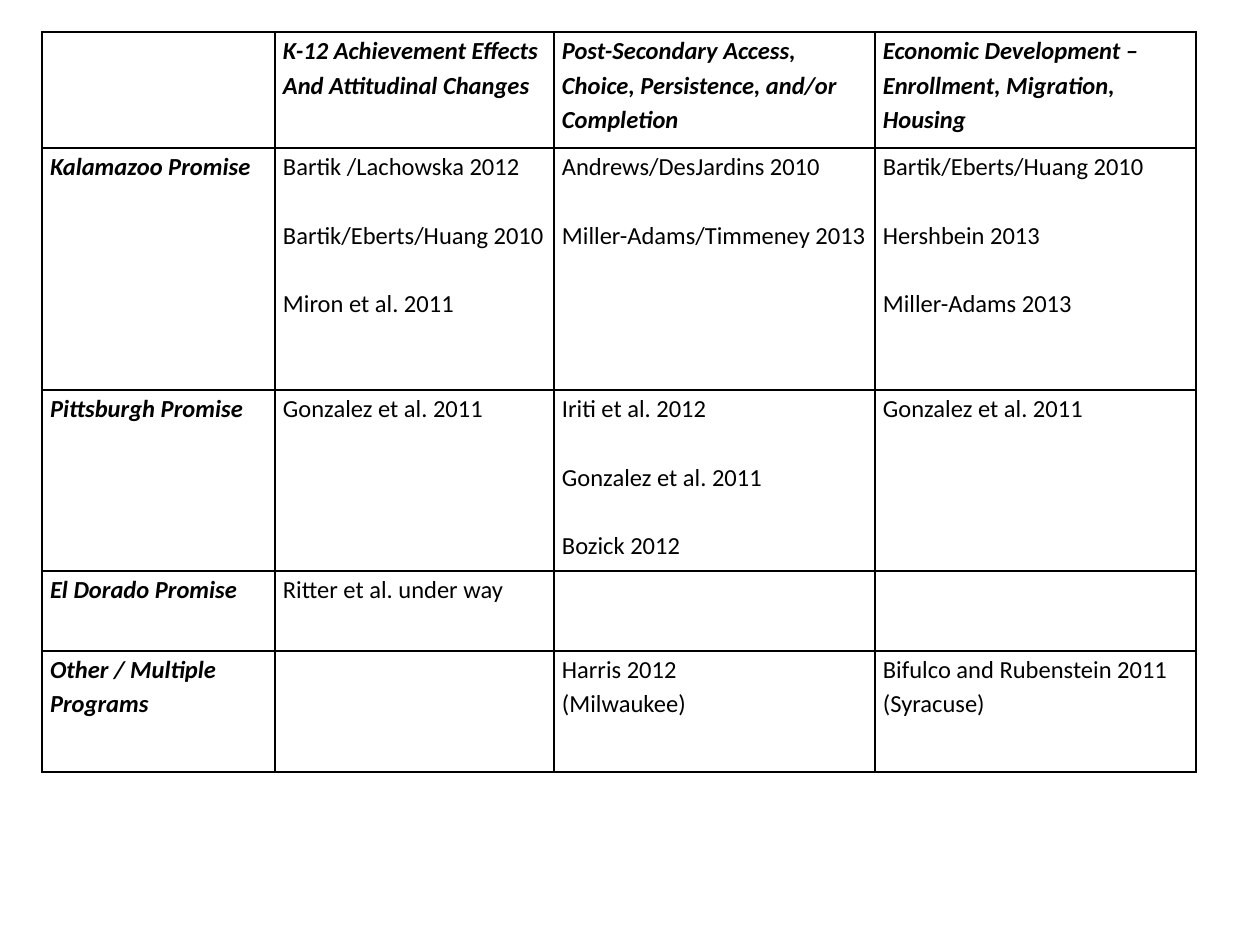
"""Build a slide with a table of Promise programme studies by topic."""
from lxml import etree
from pptx import Presentation
from pptx import util as u
from pptx.dml.color import RGBColor
from pptx.oxml import ns

HEADERS = [
    [],
    ["K-12 Achievement Effects", "And Attitudinal Changes"],
    ["Post-Secondary Access, Choice, Persistence, and/or Completion"],
    ["Economic Development – Enrollment, Migration, Housing"],
]
PROGRAMS = [
    [["Kalamazoo Promise"],
     ["Bartik /Lachowska 2012", "Bartik/Eberts/Huang 2010", "Miron et al. 2011"],
     ["Andrews/DesJardins 2010", "Miller-Adams/Timmeney 2013"],
     ["Bartik/Eberts/Huang 2010", "Hershbein 2013", "Miller-Adams 2013"]],
    [["Pittsburgh Promise"],
     ["Gonzalez et al. 2011"],
     ["Iriti et al. 2012", "Gonzalez et al. 2011", "Bozick 2012"],
     ["Gonzalez et al. 2011"]],
    [["El Dorado Promise"], ["Ritter et al. under way"], [], []],
    [["Other / Multiple Programs"],
     [],
     ["Harris 2012", "(Milwaukee)"],
     ["Bifulco and Rubenstein 2011 (Syracuse)"]],
]
COLUMN_WIDTHS = [233, 279, 321, 321]
ROW_HEIGHTS = [116, 242, 181, 80, 121]
LEFT, TOP, INSET = 42, 32, 8

BLACK = RGBColor(0, 0, 0)
FONT = "Calibri"
LINE_GAP = 19.6


def px(length):
    return u.Emu(round(length * 914400 / 126))


def write(cell, lines, bold=False, gap=0):
    cell.margin_left = cell.margin_right = px(INSET)
    cell.margin_top = cell.margin_bottom = 0
    frame = cell.text_frame
    for index, line in enumerate(lines):
        paragraph = frame.add_paragraph() if index else frame.paragraphs[0]
        paragraph.line_spacing = 1.15
        if index and gap:
            paragraph.space_before = u.Pt(gap)
        run = paragraph.add_run()
        run.text = line
        run.font.name, run.font.size = FONT, u.Pt(14)
        run.font.bold = run.font.italic = bold
        run.font.color.rgb = BLACK


def outline(cell):
    properties = cell._tc.get_or_add_tcPr()
    for side in ("a:lnL", "a:lnR", "a:lnT", "a:lnB"):
        line = etree.SubElement(properties, ns.qn(side), w=str(u.Pt(1)))
        fill = etree.SubElement(line, ns.qn("a:solidFill"))
        etree.SubElement(fill, ns.qn("a:srgbClr"), val=str(BLACK))
    cell.fill.background()


def main():
    presentation = Presentation()
    presentation.slide_width, presentation.slide_height = px(1260), px(945)
    slide = presentation.slides.add_slide(presentation.slide_layouts[6])
    rows = [HEADERS] + PROGRAMS
    table = slide.shapes.add_table(
        len(rows), len(COLUMN_WIDTHS), px(LEFT), px(TOP),
        px(sum(COLUMN_WIDTHS)), px(sum(ROW_HEIGHTS))).table
    table.first_row = table.horz_banding = False
    for column, width in zip(table.columns, COLUMN_WIDTHS):
        column.width = px(width)
    for row, height in zip(table.rows, ROW_HEIGHTS):
        row.height = px(height)
    for row_index, row in enumerate(rows):
        for column_index, lines in enumerate(row):
            cell = table.cell(row_index, column_index)
            heading = row_index == 0 or column_index == 0
            joined = heading or lines[-1:] == ["(Milwaukee)"]
            write(cell, lines, bold=heading, gap=0 if joined else LINE_GAP)
            outline(cell)
    presentation.save("out.pptx")


if __name__ == "__main__":
    main()
